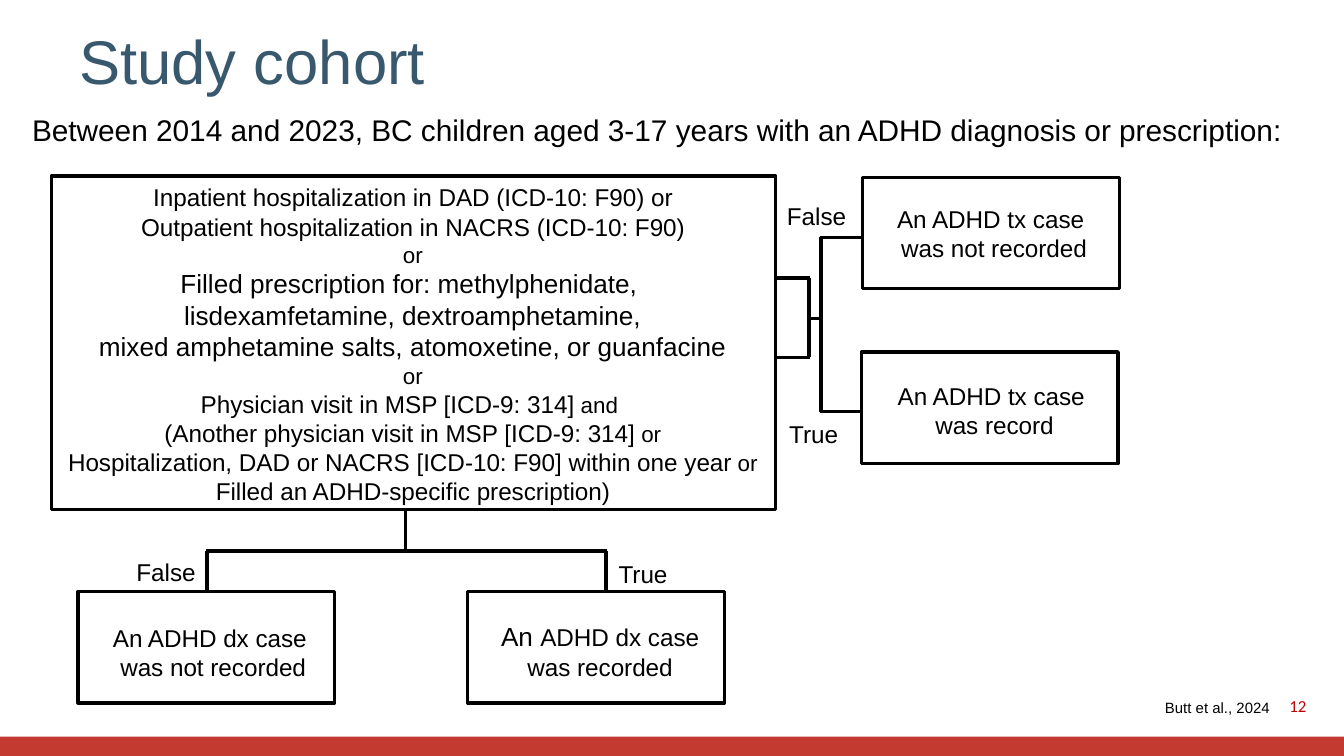
from pptx import Presentation
from pptx.dml.color import RGBColor
from pptx.enum.shapes import MSO_CONNECTOR, MSO_SHAPE
from pptx.enum.text import MSO_ANCHOR as Anchor, MSO_AUTO_SIZE as Fit, PP_ALIGN as Align
from pptx.oxml.ns import qn
from pptx.util import Pt
from lxml import etree

COLORS = {"ink": "000000", "title": "38586E", "bar": "C33B30", "number": "C00000"}
BOX_W, BOX_H = 137.5, 59.8


class Deck:
    """Style and current slide; all lengths are in points."""
    font, size, line_width = "Arial", 13, 1.75

    def __init__(self, width, height):
        self.prs = Presentation()
        self.prs.slide_width, self.prs.slide_height = Pt(width), Pt(height)
        self.slide = self.prs.slides.add_slide(self.prs.slide_layouts[5])

    def color(self, name):
        return RGBColor.from_string(COLORS[name])

    def style(self, r, size, color="ink", font=None):
        r.font.name, r.font.size = font or self.font, Pt(size)
        r.font.color.rgb = self.color(color)

    def title(self, text, x, y, w, h, size):
        sp = self.slide.shapes.title
        sp.left, sp.top, sp.width, sp.height = Pt(x), Pt(y), Pt(w), Pt(h)
        tf = sp.text_frame
        tf.text = text
        tf.auto_size, tf.vertical_anchor = Fit.NONE, Anchor.MIDDLE
        p = tf.paragraphs[0]
        p.alignment = Align.LEFT
        self.style(p.runs[0], size, "title")

    def box(self, x, y, w, h, fill=None):
        sp = self.slide.shapes.add_shape(MSO_SHAPE.RECTANGLE, Pt(x), Pt(y), Pt(w), Pt(h))
        sp.shadow.inherit = False
        if fill:
            sp.fill.solid()
            sp.fill.fore_color.rgb = self.color(fill)
            sp.line.fill.background()
        else:
            sp.fill.background()
            sp.line.color.rgb = self.color("ink")
            sp.line.width = Pt(self.line_width)

    def line(self, x1, y1, x2, y2):
        c = self.slide.shapes.add_connector(
            MSO_CONNECTOR.STRAIGHT, Pt(x1), Pt(y1), Pt(x2), Pt(y2))
        c.line.color.rgb = self.color("ink")
        c.line.width = Pt(self.line_width)
        etree.SubElement(c._element.spPr, qn("a:effectLst"))

    def text(self, lines, x, y, w, h, align=Align.CENTER, size=None, color="ink",
             font=None, wrap=False, anchor=Anchor.TOP):
        """Each line is a string or a list of (text, size) runs."""
        tf = self.slide.shapes.add_textbox(Pt(x), Pt(y), Pt(w), Pt(h)).text_frame
        tf.word_wrap, tf.vertical_anchor = wrap, anchor
        tf.auto_size = Fit.NONE if wrap else Fit.SHAPE_TO_FIT_TEXT
        for i, line in enumerate(lines):
            p = tf.add_paragraph() if i else tf.paragraphs[0]
            p.alignment = align
            runs = [(line, size or self.size)] if isinstance(line, str) else line
            for words, run_size in runs:
                r = p.add_run()
                r.text = words
                self.style(r, run_size, color, font)


def main():
    deck = Deck(720, 405)

    # Frame of the slide
    deck.box(0, 394.6, 720, 10.4, "bar")
    deck.title("Study cohort", 35.3, 7.9, 624.2, 48.2, 33)
    deck.text(["12"], 678.2, 367.2, 28.8, 21.6, Align.RIGHT, 9, "number", "Calibri",
              wrap=True, anchor=Anchor.MIDDLE)
    deck.text(["Between 2014 and 2023, BC children aged 3-17 years with an ADHD "
               "diagnosis or prescription:"], 10.1, 56.2, 691.9, 26.6, Align.LEFT, 16)
    deck.text(["Butt et al., 2024"], 617, 370.8, 101.5, 18, Align.LEFT, 8, wrap=True)

    # Case definition
    deck.box(27.4, 94.3, 388.1, 178.6)
    deck.text([
        "Inpatient hospitalization in DAD (ICD-10: F90) or",
        "Outpatient hospitalization in NACRS (ICD-10: F90)",
        [("or", 12)],
        [("Filled prescription for: methylphenidate, ", 14)],
        [("lisdexamfetamine, dextroamphetamine,", 14)],
        [("mixed amphetamine salts, atomoxetine, or guanfacine", 14)],
        [("or", 12)],
        [("Physician visit in MSP [ICD-9: 314] ", 13), ("and", 12), (" ", 13)],
        [("(Another physician visit in MSP [ICD-9: 314] ", 13), ("or", 12)],
        [("Hospitalization, DAD or NACRS [ICD-10: F90] within one year ", 13), ("or", 12)],
        "Filled an ADHD-specific prescription)",
    ], 23.8, 94.3, 394.6, 181.4)

    # Outcome boxes: box corner, then text area
    outcomes = [
        ((41.8, 316.8), (52.6, 330.5, 119.5, 55.4),
         ["An ADHD dx case", " was not recorded"]),
        ((250.6, 316.8), (260.6, 329, 121.7, 40.3),
         [[("An ", 14), ("ADHD dx case", 13)], "was recorded"]),
        ((462.2, 95), (470.9, 105.8, 119.5, 55.4),
         ["An ADHD tx case", " was not recorded"]),
        ((461.5, 188.6), (473, 200.9, 115.9, 55.4),
         ["An ADHD tx case", " was record"]),
    ]
    for corner, area, lines in outcomes:
        deck.box(*corner, BOX_W, BOX_H)
        deck.text(lines, *area)

    # Branch below: stem, crossbar, two drops
    deck.line(217.4, 272.9, 217.4, 295.2)
    deck.line(110.2, 295.2, 325.4, 295.2)
    for x in (110.9, 324.7):
        deck.line(x, 295.2, x, 316.8)

    # Branch to the right: bracket, link, two arms
    for y in (149, 191.5):
        deck.line(415.4, y, 434.2, y)
    deck.line(433.4, 149, 433.4, 191.5)
    deck.line(432.7, 170.6, 439.2, 170.6)
    deck.line(439.9, 127.1, 439.9, 220.7)
    for y in (127.4, 220.3):
        deck.line(439.2, y, 461.5, y)

    # Branch labels
    for label, x, y, w in (("False", 65.5, 295.2, 46.8), ("True", 324, 295.9, 41),
                           ("False", 414, 104.4, 46.8), ("True", 415.4, 221, 41)):
        deck.text([label], x, y, w, 23)

    deck.prs.save("out.pptx")


if __name__ == "__main__":
    main()
